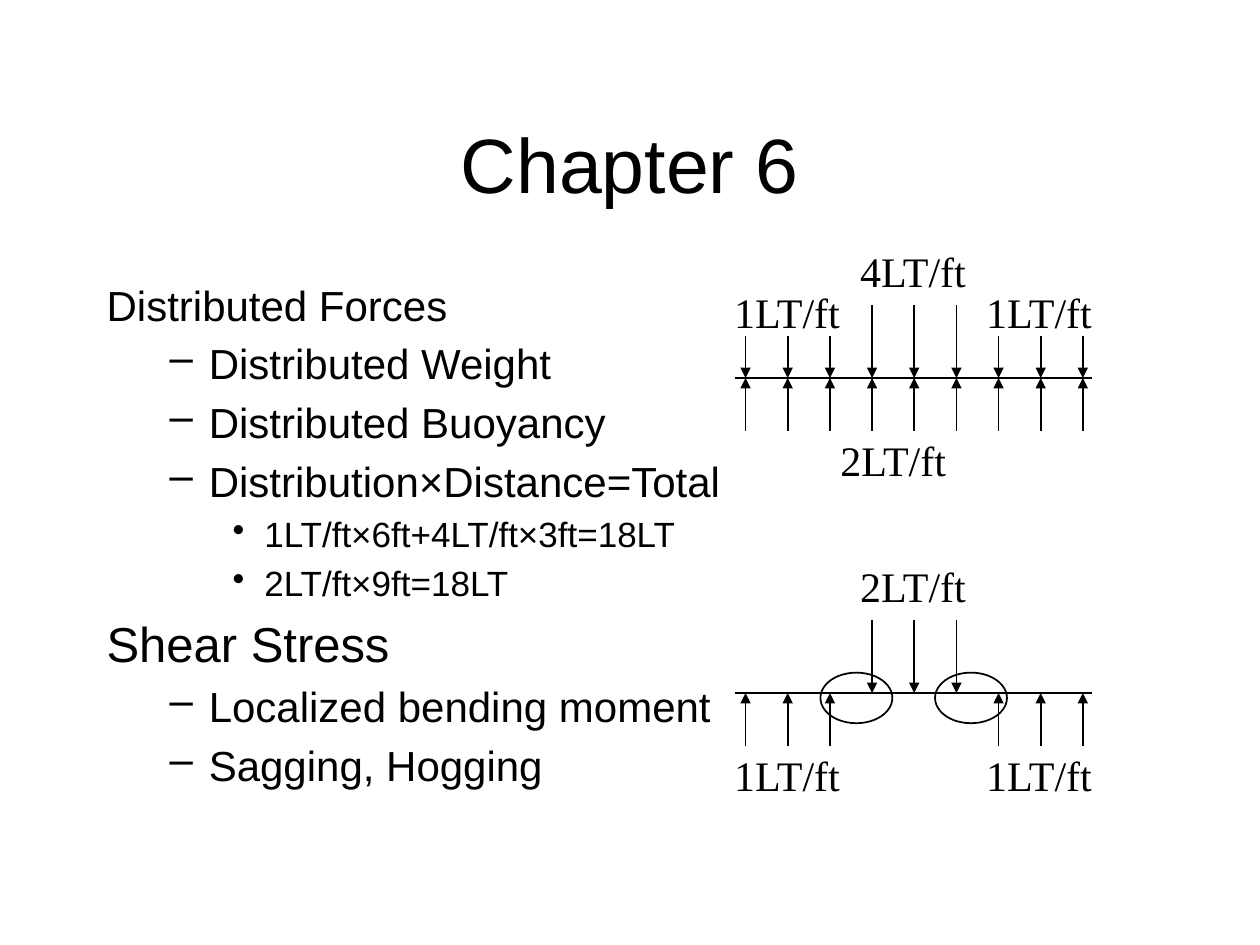
from dataclasses import dataclass

from lxml import etree
from pptx import Presentation
from pptx import util as u
from pptx.dml.color import RGBColor
from pptx.enum import shapes, text
from pptx.oxml import ns


@dataclass(frozen=True)
class Theme:
    ink: RGBColor = RGBColor(0, 0, 0)
    paper: RGBColor = RGBColor(255, 255, 255)
    sans: str = "Arial"
    serif: str = "Times New Roman"
    title: int = 44
    heading: int = 28
    item: int = 24
    detail: int = 20
    line: int = 1


THEME = Theme()

OUTLINE = [
    (0, THEME.item, "Distributed Forces"),
    (1, THEME.item, "Distributed Weight"),
    (1, THEME.item, "Distributed Buoyancy"),
    (1, THEME.item, "Distribution×Distance=Total"),
    (2, THEME.detail, "1LT/ft×6ft+4LT/ft×3ft=18LT"),
    (2, THEME.detail, "2LT/ft×9ft=18LT"),
    (0, THEME.heading, "Shear Stress"),
    (1, THEME.item, "Localized bending moment"),
    (1, THEME.item, "Sagging, Hogging"),
]
# For each level: left margin and hanging indent in cm, bullet sign
LEVELS = [(0.95, 0.95, None), (2.06, 0.79, "–"), (3.18, 0.64, "•")]

# Horizontal places in cm, shared by both beams
BEAM_LEFT, BEAM_RIGHT = 14.82, 22.01
FIRST_ARROW, ARROW_STEP = 15.03, 0.85
LEFT_LABEL, MIDDLE_LABEL, RIGHT_LABEL = 14.55, 17.09, 19.63
LEFT_END, MIDDLE, RIGHT_END = range(0, 3), range(3, 6), range(6, 9)

# Heights in cm from the beam, negative above it
SHORT_LOAD, LONG_LOAD, SUPPORT = -0.85, -1.48, 1.06
LOW_LABEL, HIGH_LABEL, BELOW_LABEL = -1.96, -2.79, 1.02


def add_box(page, left, top, width, height):
    box = page.shapes.add_textbox(u.Cm(left), u.Cm(top), u.Cm(width), u.Cm(height))
    box.text_frame.word_wrap = True
    return box.text_frame


def add_span(para, words, size, font):
    span = para.add_run()
    span.text = words
    span.font.size = u.Pt(size)
    span.font.name = font
    span.font.color.rgb = THEME.ink


def add_title(page, words):
    frame = add_box(page, 1.9, 1.7, 21.6, 3.18)
    frame.vertical_anchor = text.MSO_ANCHOR.MIDDLE
    para = frame.paragraphs[0]
    para.alignment = text.PP_ALIGN.CENTER
    add_span(para, words, THEME.title, THEME.sans)


def format_level(para, level):
    """Set the indent, the relative space before and the bullet of a level."""
    margin, hanging, sign = LEVELS[level]
    para.level = level
    props = para._p.get_or_add_pPr()
    props.set("marL", str(u.Cm(margin)))
    props.set("indent", str(-u.Cm(hanging)))
    before = etree.SubElement(props, ns.qn("a:spcBef"))
    etree.SubElement(before, ns.qn("a:spcPct")).set("val", "20000")
    if sign:
        etree.SubElement(props, ns.qn("a:buChar")).set("char", sign)
    else:
        etree.SubElement(props, ns.qn("a:buNone"))


def add_outline(page):
    frame = add_box(page, 1.9, 5.5, 21.6, 11.43)
    for index, (level, size, words) in enumerate(OUTLINE):
        para = frame.add_paragraph() if index else frame.paragraphs[0]
        format_level(para, level)
        add_span(para, words, size, THEME.sans)


def add_label(page, left, top, words):
    frame = add_box(page, left, top, 2.72, 1.27)
    frame.word_wrap = False
    frame.auto_size = text.MSO_AUTO_SIZE.SHAPE_TO_FIT_TEXT
    add_span(frame.paragraphs[0], words, THEME.item, THEME.serif)


def add_line(page, start, end, arrow=False):
    line = page.shapes.add_connector(
        shapes.MSO_CONNECTOR.STRAIGHT, *map(u.Cm, start), *map(u.Cm, end))
    line.line.color.rgb = THEME.ink
    line.line.width = u.Pt(THEME.line)
    if arrow:
        etree.SubElement(line.line._get_or_add_ln(), ns.qn("a:tailEnd")).set("type", "triangle")
    etree.SubElement(line._element.spPr, ns.qn("a:effectLst"))


def add_beam(page, height, forces, labels):
    """Draw a beam with forces (positions, offset) and labels (left, offset, words)."""
    add_line(page, (BEAM_LEFT, height), (BEAM_RIGHT, height))
    for positions, offset in forces:
        for position in positions:
            across = FIRST_ARROW + position * ARROW_STEP
            add_line(page, (across, height + offset), (across, height), arrow=True)
    for left, offset, words in labels:
        add_label(page, left, height + offset, words)


def add_shear_mark(page, left, top):
    mark = page.shapes.add_shape(
        shapes.MSO_SHAPE.OVAL, u.Cm(left), u.Cm(top), u.Cm(1.45), u.Cm(1.02))
    mark.shadow.inherit = False
    mark.fill.background()
    mark.line.color.rgb = THEME.ink
    mark.line.width = u.Pt(THEME.line)


def main():
    deck = Presentation()
    deck.slide_width, deck.slide_height = u.Cm(25.4), u.Cm(19.05)
    page = deck.slides.add_slide(deck.slide_layouts[6])
    page.background.fill.solid()
    page.background.fill.fore_color.rgb = THEME.paper

    add_title(page, "Chapter 6")
    add_outline(page)
    add_beam(
        page, 7.62,
        [(LEFT_END, SHORT_LOAD), (MIDDLE, LONG_LOAD), (RIGHT_END, SHORT_LOAD),
         (range(9), SUPPORT)],
        [(16.69, BELOW_LABEL, "2LT/ft"), (LEFT_LABEL, LOW_LABEL, "1LT/ft"),
         (RIGHT_LABEL, LOW_LABEL, "1LT/ft"), (MIDDLE_LABEL, HIGH_LABEL, "4LT/ft")])
    add_beam(
        page, 13.97,
        [(MIDDLE, LONG_LOAD), (LEFT_END, SUPPORT), (RIGHT_END, SUPPORT)],
        [(LEFT_LABEL, BELOW_LABEL, "1LT/ft"), (RIGHT_LABEL, BELOW_LABEL, "1LT/ft"),
         (MIDDLE_LABEL, HIGH_LABEL, "2LT/ft")])
    for left in (16.54, 18.85):
        add_shear_mark(page, left, 13.56)
    deck.save("out.pptx")


if __name__ == "__main__":
    main()
